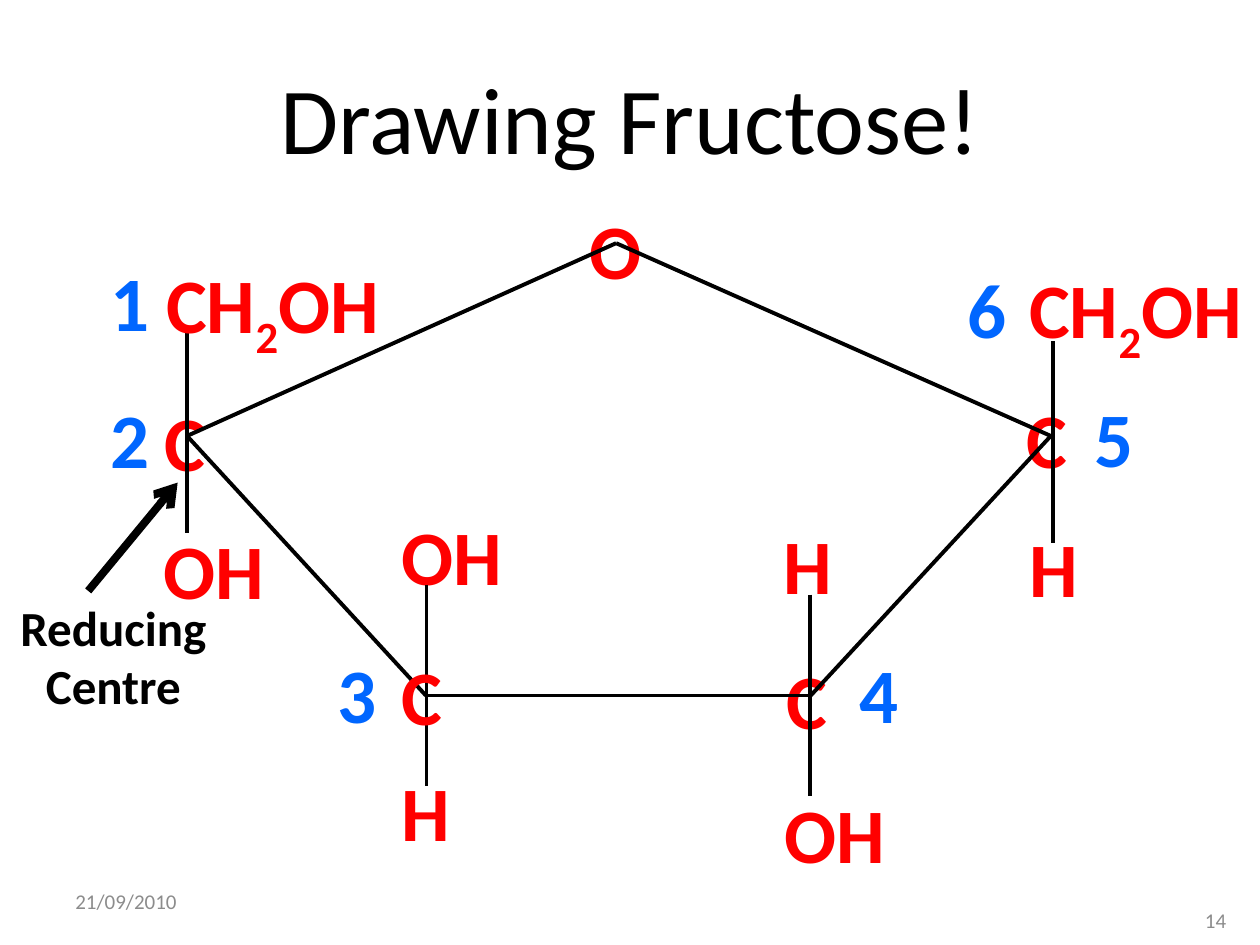
from dataclasses import dataclass
from itertools import pairwise

from lxml.etree import SubElement
from pptx import Presentation
from pptx.dml.color import RGBColor
from pptx.enum.shapes import MSO_CONNECTOR
from pptx.enum.text import MSO_ANCHOR, MSO_AUTO_SIZE, PP_ALIGN
from pptx.oxml.ns import qn
from pptx.shapes.connector import Connector
from pptx.slide import Slide
from pptx.util import Inches, Length, Pt

COLUMNS, ROWS = 100, 75
CELL = 0.1  # inches
LABEL_HEIGHT = 8.4
BLACK, GREY, RED, BLUE = "000000", "8C8C8C", "FF0000", "0066FF"

Point = tuple[float, float]


@dataclass(frozen=True)
class Caption:
    text: str
    column: float
    row: float
    width: float
    height: float = LABEL_HEIGHT
    size: float = 44
    color: str = RED
    bold: bool = True
    align: PP_ALIGN = PP_ALIGN.LEFT
    anchor: MSO_ANCHOR = MSO_ANCHOR.TOP
    grows: bool = True


@dataclass(frozen=True)
class Bond:
    start: Point
    end: Point
    weight: float = 2.25


def grid(cells: float) -> Length:
    return Inches(cells * CELL)


def rgb(color: str) -> RGBColor:
    return RGBColor.from_string(color)


def draw_caption(slide: Slide, caption: Caption) -> None:
    """Write the caption, with its digits as subscripts when letters come first."""
    box = slide.shapes.add_textbox(grid(caption.column), grid(caption.row),
                                   grid(caption.width), grid(caption.height))
    frame = box.text_frame
    frame.word_wrap = True
    frame.vertical_anchor = caption.anchor
    if caption.grows:
        frame.auto_size = MSO_AUTO_SIZE.SHAPE_TO_FIT_TEXT
    paragraph = frame.paragraphs[0]
    paragraph.alignment = caption.align
    is_formula = caption.text.startswith("CH2")
    parts = ("CH", "2", "OH") if is_formula else (caption.text,)
    for part in parts:
        run = paragraph.add_run()
        run.text = part
        run.font.name = "Calibri"
        run.font.size = Pt(caption.size)
        run.font.bold = caption.bold
        run.font.color.rgb = rgb(caption.color)
        if is_formula and part.isdigit():
            run.font._element.set("baseline", "-25000")


def draw_bond(slide: Slide, bond: Bond) -> Connector:
    line = slide.shapes.add_connector(MSO_CONNECTOR.STRAIGHT,
                                      *map(grid, bond.start + bond.end))
    line.line.color.rgb = rgb(BLACK)
    line.line.width = Pt(bond.weight)
    SubElement(line._element.spPr, qn("a:effectLst"))
    return line


def draw_arrow(slide: Slide, bond: Bond) -> None:
    arrow = draw_bond(slide, bond)
    SubElement(arrow.line._get_or_add_ln(), qn("a:tailEnd"), type="arrow")


FRAME_TEXTS = [
    Caption("Drawing Fructose!", 5, 3, 90, 12.5, 54, BLACK, False,
            PP_ALIGN.CENTER, MSO_ANCHOR.MIDDLE, False),
    Caption("21/09/2010", 5, 69.5, 23.3, 4, 12, GREY, False,
            PP_ALIGN.LEFT, MSO_ANCHOR.MIDDLE, False),
    Caption("14", 75, 71, 23.3, 4, 12, GREY, False,
            PP_ALIGN.RIGHT, MSO_ANCHOR.MIDDLE, False),
]

ATOMS_BEHIND = [
    Caption("C", 12.1, 30.8, 5.8),
    Caption("C", 80.5, 30.6, 6.3),
    Caption("C", 61.4, 51.3, 5.8),
    Caption("CH2OH", 80.7, 20.3, 21.1),
    Caption("OH", 12, 41, 10.3),
    Caption("OH", 61.3, 61.9, 10.3),
    Caption("OH", 30.9, 39.9, 10.3),
    Caption("H", 80.7, 40.8, 6.2),
    Caption("H", 30.9, 60.2, 5.5),
    Caption("H", 61.2, 40.6, 6),
    Caption("O", 45.8, 15.6, 7.3),
]

ATOMS_IN_FRONT = [
    Caption("CH2OH", 12.2, 19.9, 21.1),
    Caption("C", 30.9, 51, 5.8),
]

CARBON_NUMBER_PLACES = [(7.8, 19.7), (7.8, 30.6), (25.8, 50.8),
                        (67.2, 50.8), (85.9, 30.5), (75.8, 20.3)]

RING = [(48.9, 19.3), (83.4, 34.6), (64.35, 55.2),
        (33.8, 55.2), (14.85, 34.6)]

SIDE_BOND_LENGTH = 16
SIDE_BOND_TOPS = [(14.85, 26.3), (83.6, 27.1), (33.85, 46.4), (64.3, 47.2)]

REDUCING_CENTRE = Caption("Reducing Centre", 0, 46.9, 18, 10.4, 28, BLACK,
                          align=PP_ALIGN.CENTER)
REDUCING_ARROW = Bond((7, 46.9), (14.1, 38.3), 4.5)


def main() -> None:
    deck = Presentation()
    deck.slide_width, deck.slide_height = grid(COLUMNS), grid(ROWS)
    slide = deck.slides.add_slide(deck.slide_layouts[6])

    carbon_numbers = [Caption(str(number), column, row, 5.5, color=BLUE)
                      for number, (column, row)
                      in enumerate(CARBON_NUMBER_PLACES, start=1)]
    for caption in FRAME_TEXTS + ATOMS_BEHIND + carbon_numbers:
        draw_caption(slide, caption)

    side_bonds = [Bond((column, row), (column, row + SIDE_BOND_LENGTH))
                  for column, row in SIDE_BOND_TOPS]
    ring_bonds = [Bond(start, end) for start, end in pairwise(RING + RING[:1])]
    for bond in side_bonds + ring_bonds:
        draw_bond(slide, bond)

    for caption in ATOMS_IN_FRONT + [REDUCING_CENTRE]:
        draw_caption(slide, caption)
    draw_arrow(slide, REDUCING_ARROW)
    deck.save("out.pptx")


if __name__ == "__main__":
    main()
